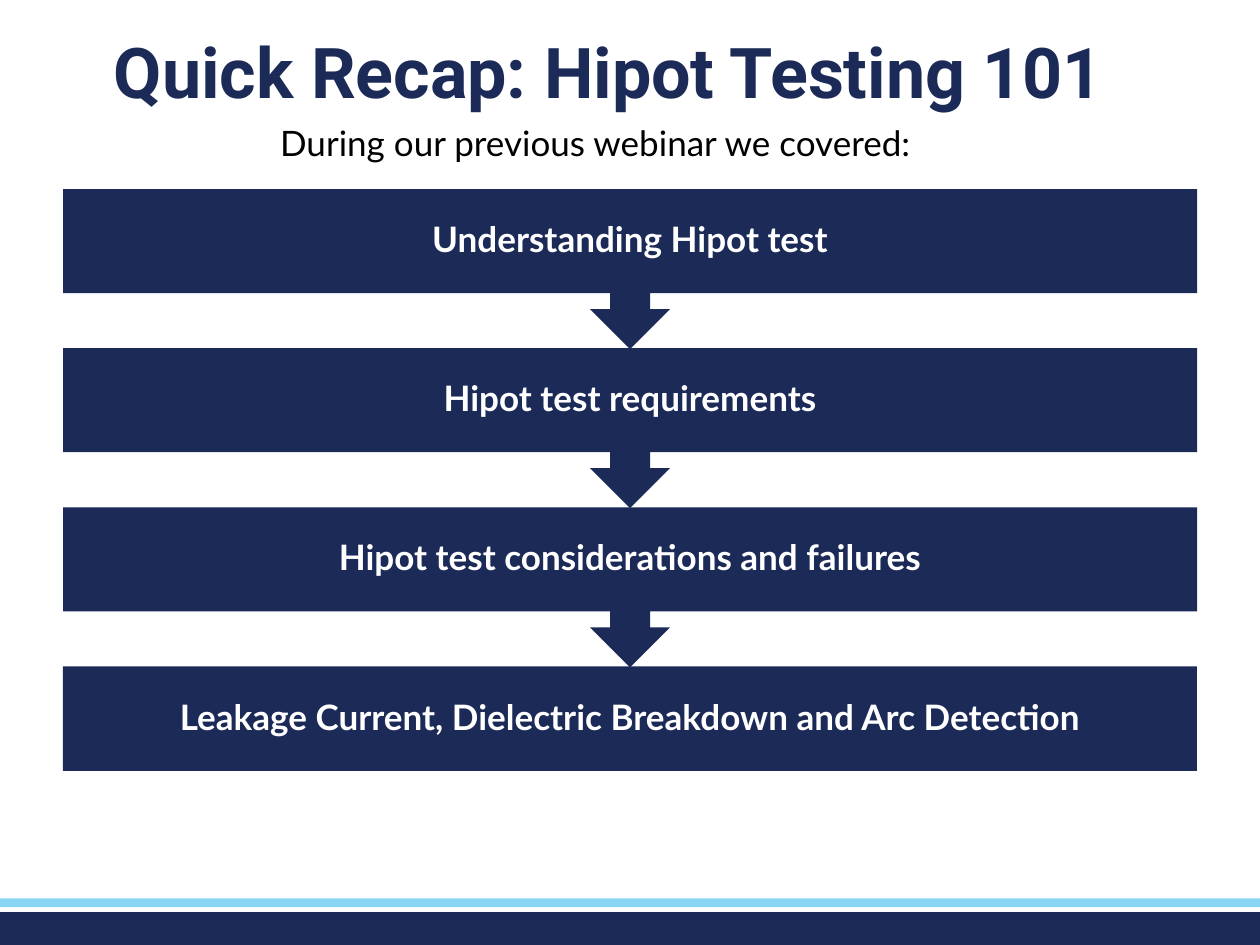
from pptx import Presentation
from pptx.dml.color import RGBColor
from pptx.enum.shapes import MSO_SHAPE
from pptx.enum.text import MSO_ANCHOR, PP_ALIGN
from pptx.util import Inches, Pt

NAVY = RGBColor(0x1C, 0x2A, 0x58)
SKY = RGBColor(0x88, 0xD6, 0xF4)
WHITE = RGBColor(0xFF, 0xFF, 0xFF)
BLACK = RGBColor(0x00, 0x00, 0x00)

TOPICS = [
    "Understanding Hipot test",
    "Hipot test requirements",
    "Hipot test considerations and failures",
    "Leakage Current, Dielectric Breakdown and Arc Detection",
]


def add_block(s, kind, x, y, w, h, color):
    sp = s.shapes.add_shape(kind, Inches(x), Inches(y), Inches(w), Inches(h))
    sp.shadow.inherit = False
    sp.fill.solid()
    sp.fill.fore_color.rgb = color
    sp.line.fill.background()
    return sp


def add_text(s, text, x, y, w, h, size=20, font="Lato", color=BLACK,
             bold=False, anchor=MSO_ANCHOR.TOP, inset=None, indent=0):
    box = s.shapes.add_textbox(Inches(x), Inches(y), Inches(w), Inches(h))
    tf = box.text_frame
    tf.word_wrap = True
    tf.vertical_anchor = anchor
    if inset is not None:
        tf.margin_left = tf.margin_right = Inches(inset)
        tf.margin_top = tf.margin_bottom = Inches(inset)
    p = tf.paragraphs[0]
    p.alignment = PP_ALIGN.CENTER
    p.line_spacing = 0.9
    if indent:
        p._p.get_or_add_pPr().set("marL", str(Inches(indent)))
    r = p.add_run()
    r.text = text
    r.font.size = Pt(size)
    r.font.name = font
    r.font.bold = bold
    r.font.color.rgb = color


def add_footer(s, x, y, w):
    add_block(s, MSO_SHAPE.RECTANGLE, x, y + 0.11, w, 0.26, NAVY)
    add_block(s, MSO_SHAPE.RECTANGLE, x, y, w, 0.07, SKY)


def add_heading(s, x, y):
    add_text(s, "Quick Recap: Hipot Testing 101", x, y, 9, 0.66,
             size=40, font="Roboto", color=NAVY, bold=True)
    add_text(s, "During our previous webinar we covered:",
             x + 0.17, y + 0.7, 8.33, 0.45, indent=0.12)


def add_topic_flow(s, x, y, w, topics, bar_h=0.83, callout_h=1.27, pitch=1.263):
    # Drawn from the bottom up so each arrow tip lies over the next bar
    for i, topic in reversed(list(enumerate(topics))):
        top = y + i * pitch
        if i == len(topics) - 1:
            add_block(s, MSO_SHAPE.RECTANGLE, x, top, w, bar_h, NAVY)
        else:
            callout = add_block(s, MSO_SHAPE.UP_ARROW_CALLOUT,
                                x, top, w, callout_h, NAVY)
            callout.rotation = 180
        add_text(s, topic, x, top, w, bar_h, color=WHITE, bold=True,
                 anchor=MSO_ANCHOR.MIDDLE, inset=0.16)


def main():
    prs = Presentation()
    prs.slide_width, prs.slide_height = Inches(10), Inches(7.5)
    s = prs.slides.add_slide(prs.slide_layouts[6])
    add_footer(s, 0, 7.13, 10)
    add_topic_flow(s, 0.5, 1.5, 9, TOPICS)
    add_heading(s, 0.33, 0.25)
    prs.save("out.pptx")


if __name__ == "__main__":
    main()
